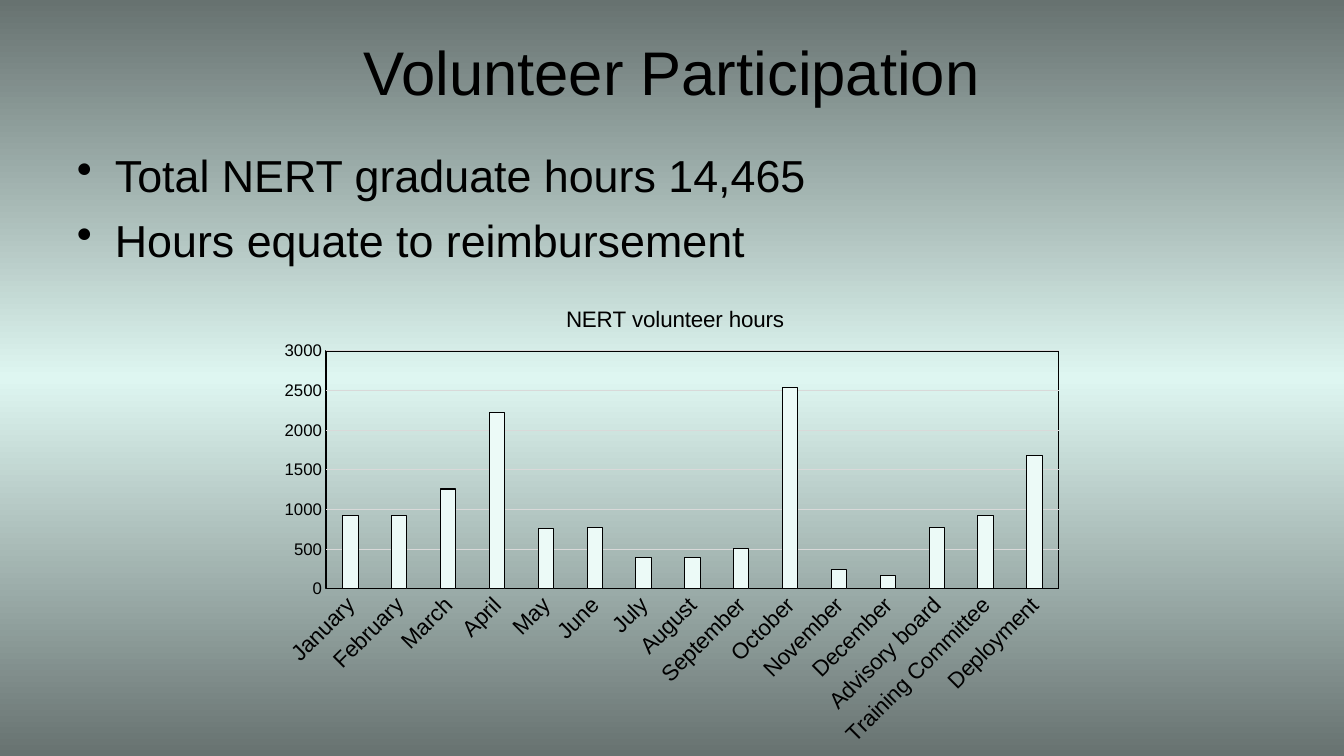
"""Builds the Volunteer Participation slide with its bullets and hours chart."""
from copy import deepcopy

from lxml import etree
from pptx import Presentation
from pptx.chart.data import CategoryChartData
from pptx.dml.color import RGBColor
from pptx.enum.chart import XL_CHART_TYPE, XL_TICK_MARK
from pptx.enum.text import MSO_ANCHOR, PP_ALIGN
from pptx.oxml import parse_xml
from pptx.oxml.ns import nsdecls, qn
from pptx.util import Emu, Pt

COLUMNS = XL_CHART_TYPE.COLUMN_CLUSTERED
NO_TICK = XL_TICK_MARK.NONE
CENTER = PP_ALIGN.CENTER
MIDDLE = MSO_ANCHOR.MIDDLE

THEME = {
    "font": "Arial",
    "ink": RGBColor.from_string("000000"),
    "edge": RGBColor.from_string("677270"),
    "glow": RGBColor.from_string("DEF6F1"),
    "bar": RGBColor.from_string("ECFAF7"),
    "grid": RGBColor.from_string("D9D9D9"),
    "title": Pt(44),
    "body": Pt(32),
    "chart_title": Pt(16),
    "months": Pt(16),
    "hours": Pt(12),
    "line": Pt(0.75),
}
PX = 914400 / 100.8
CHART_BOX = (268, 280, 807, 476)

HOURS = {
    "January": 920, "February": 930, "March": 1260, "April": 2220,
    "May": 760, "June": 770, "July": 390, "August": 390,
    "September": 510, "October": 2540, "November": 250, "December": 170,
    "Advisory board": 770, "Training Committee": 920, "Deployment": 1680,
}


def box(*lengths):
    """Turns px lengths into EMU."""
    return [Emu(round(length * PX)) for length in lengths]


def style(font, size):
    """Applies the theme font, ink and a size."""
    font.name = THEME["font"]
    font.size = size
    font.bold = False
    font.color.rgb = THEME["ink"]


prs = Presentation()
prs.slide_width, prs.slide_height = box(1344, 756)
slide = prs.slides.add_slide(prs.slide_layouts[5])

backdrop = slide.background.fill
backdrop.gradient()
backdrop.gradient_angle = 270
first_stop = backdrop.gradient_stops[0]._gs
first_stop.addnext(deepcopy(first_stop))
for stop, position, tint in zip(list(backdrop.gradient_stops)[:3], (0, 0.5, 1), ("edge", "glow", "edge")):
    stop.position = position
    stop.color.rgb = THEME[tint]

heading = slide.shapes.title
heading.left, heading.top, heading.width, heading.height = box(67, 8, 1210, 126)
heading.text_frame.text = "Volunteer Participation"
heading.text_frame.vertical_anchor = MIDDLE
heading.text_frame.paragraphs[0].alignment = CENTER
style(heading.text_frame.paragraphs[0].runs[0].font, THEME["title"])

points = slide.shapes.add_textbox(*box(67, 143, 1210, 532)).text_frame
points.word_wrap = True
points.text = "Total NERT graduate hours 14,465\nHours equate to reimbursement"
indent = box(38)[0]
for index, point in enumerate(points.paragraphs):
    properties = point._p.get_or_add_pPr()
    properties.set("marL", str(indent))
    properties.set("indent", str(-indent))
    etree.SubElement(properties, qn("a:buChar")).set("char", "•")
    point.space_before = Pt(8 * index)
    style(point.runs[0].font, THEME["body"])

data = CategoryChartData()
data.categories = list(HOURS)
data.add_series("Series 1", list(HOURS.values()))
chart = slide.shapes.add_chart(COLUMNS, *box(*CHART_BOX), data).chart
chart.has_legend = False
style(chart.font, Pt(10))
chart.has_title = True
caption = chart.chart_title.text_frame
caption.text = "NERT volunteer hours"
style(caption.paragraphs[0].runs[0].font, THEME["chart_title"])

bars = chart.plots[0]
bars.vary_by_categories = False
bars.gap_width = 219
bars.overlap = -27
hours = bars.series[0]
hours.format.fill.solid()
hours.format.fill.fore_color.rgb = THEME["bar"]
hours.format.line.color.rgb = THEME["ink"]
hours.format.line.width = THEME["line"]

months_axis, hours_axis = chart.category_axis, chart.value_axis
for axis, size in ((months_axis, THEME["months"]), (hours_axis, THEME["hours"])):
    axis.major_tick_mark = NO_TICK
    axis.minor_tick_mark = NO_TICK
    style(axis.tick_labels.font, size)
months_axis.format.line.color.rgb = THEME["ink"]
months_axis.format.line.width = THEME["line"]
months_axis._element.find(qn("c:txPr")).find(qn("a:bodyPr")).set("rot", "-2700000")
hours_axis.format.line.fill.background()
hours_axis.minimum_scale = 0
hours_axis.maximum_scale = 3000
hours_axis.major_unit = 500
hours_axis.major_gridlines.format.line.color.rgb = THEME["grid"]
hours_axis.major_gridlines.format.line.width = THEME["line"]

plot_area = chart._chartSpace.chart.plotArea
plot_area.append(parse_xml(
    f'<c:spPr {nsdecls("c", "a")}><a:noFill/><a:ln w="{THEME["line"]}"><a:solidFill>'
    f'<a:srgbClr val="{THEME["ink"]}"/></a:solidFill></a:ln></c:spPr>'))

left, top, width, height = CHART_BOX
placements = (
    (chart.chart_title._element, {"x": (562 - left) / width, "y": (301 - top) / height}),
    (plot_area, {"x": (326 - left) / width, "y": (351 - top) / height, "w": 733 / width, "h": 238 / height}),
)
for part, fractions in placements:
    layout = part.find(qn("c:layout"))
    if layout is None:
        layout = etree.Element(qn("c:layout"))
        part.insert(0, layout)
    manual = etree.SubElement(layout, qn("c:manualLayout"))
    if part is plot_area:
        etree.SubElement(manual, qn("c:layoutTarget")).set("val", "inner")
    for side in ("x", "y"):
        etree.SubElement(manual, qn(f"c:{side}Mode")).set("val", "edge")
    for side, fraction in fractions.items():
        etree.SubElement(manual, qn(f"c:{side}")).set("val", f"{fraction:.4f}")

prs.save("out.pptx")
